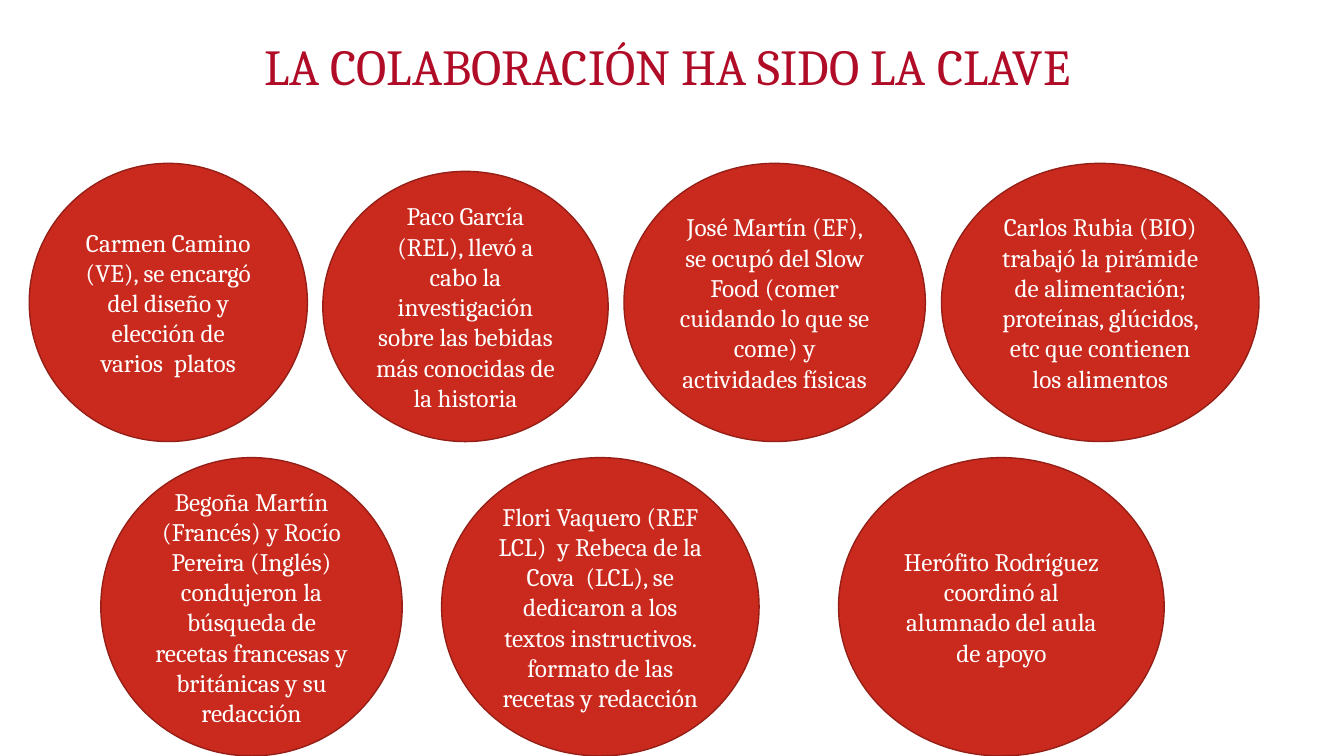
from pptx import Presentation
from pptx.dml.color import RGBColor
from pptx.enum import shapes, text
from pptx.util import Pt

HUES = {"title": "B10C27", "fill": "CA2A1E", "edge": "951F16", "text": "FFFFFF"}
FONT = "Cambria"

deck = Presentation()
deck.slide_width, deck.slide_height = Pt(960), Pt(540)
slide = deck.slides.add_slide(deck.slide_layouts[6])


def write(frame, words, size, hue):
    """Put one run of text in the first paragraph and return the paragraph."""
    frame.word_wrap = True
    para = frame.paragraphs[0]
    run = para.add_run()
    run.text = words
    run.font.name = FONT
    run.font.size = Pt(size)
    run.font.color.rgb = RGBColor.from_string(HUES[hue])
    return para


title = slide.shapes.add_textbox(Pt(133.9), Pt(20.9), Pt(720), Pt(51.1))
title.text_frame.vertical_anchor = text.MSO_ANCHOR.BOTTOM
title.text_frame.margin_left = Pt(55)
para = write(title.text_frame, "LA COLABORACIÓN HA SIDO LA CLAVE", 36, "title")
para.line_spacing = 0.85

# Each circle: left, width, height, words; circles in a row share a bottom edge
rows = [
    (315.4, [
        (20.9, 198.7, 198.7, "Carmen Camino (VE), se encargó del diseño y "
         "elección de varios  platos"),
        (230.6, 203.8, 193, "Paco García (REL), llevó a cabo la investigación "
         "sobre las bebidas más conocidas de la historia"),
        (445.7, 215.3, 198.7, "José Martín (EF), se ocupó del Slow Food (comer "
         "cuidando lo que se come) y actividades físicas"),
        (672.5, 226.8, 198.7, "Carlos Rubia (BIO) trabajó la pirámide de "
         "alimentación; proteínas, glúcidos, etc que contienen los alimentos"),
    ]),
    (540, [
        (72, 215.3, 213.1, "Begoña Martín (Francés) y Rocío Pereira (Inglés) "
         "condujeron la búsqueda de recetas francesas y británicas y su "
         "redacción"),
        (315.4, 226.8, 213.1, "Flori Vaquero (REF LCL)  y Rebeca de la Cova  "
         "(LCL), se dedicaron a los textos instructivos. formato de las "
         "recetas y redacción"),
        (599, 232.6, 213.1, "Herófito Rodríguez coordinó al alumnado del aula "
         "de apoyo"),
    ]),
]

for base, row in rows:
    for left, width, height, words in row:
        disc = slide.shapes.add_shape(
            shapes.MSO_SHAPE.OVAL,
            Pt(left), Pt(base - height), Pt(width), Pt(height))
        disc.shadow.inherit = False
        disc.fill.solid()
        disc.fill.fore_color.rgb = RGBColor.from_string(HUES["fill"])
        disc.line.color.rgb = RGBColor.from_string(HUES["edge"])
        disc.line.width = Pt(1)
        disc.text_frame.vertical_anchor = text.MSO_ANCHOR.MIDDLE
        para = write(disc.text_frame, words, 18, "text")
        para.alignment = text.PP_ALIGN.CENTER

deck.save("out.pptx")
